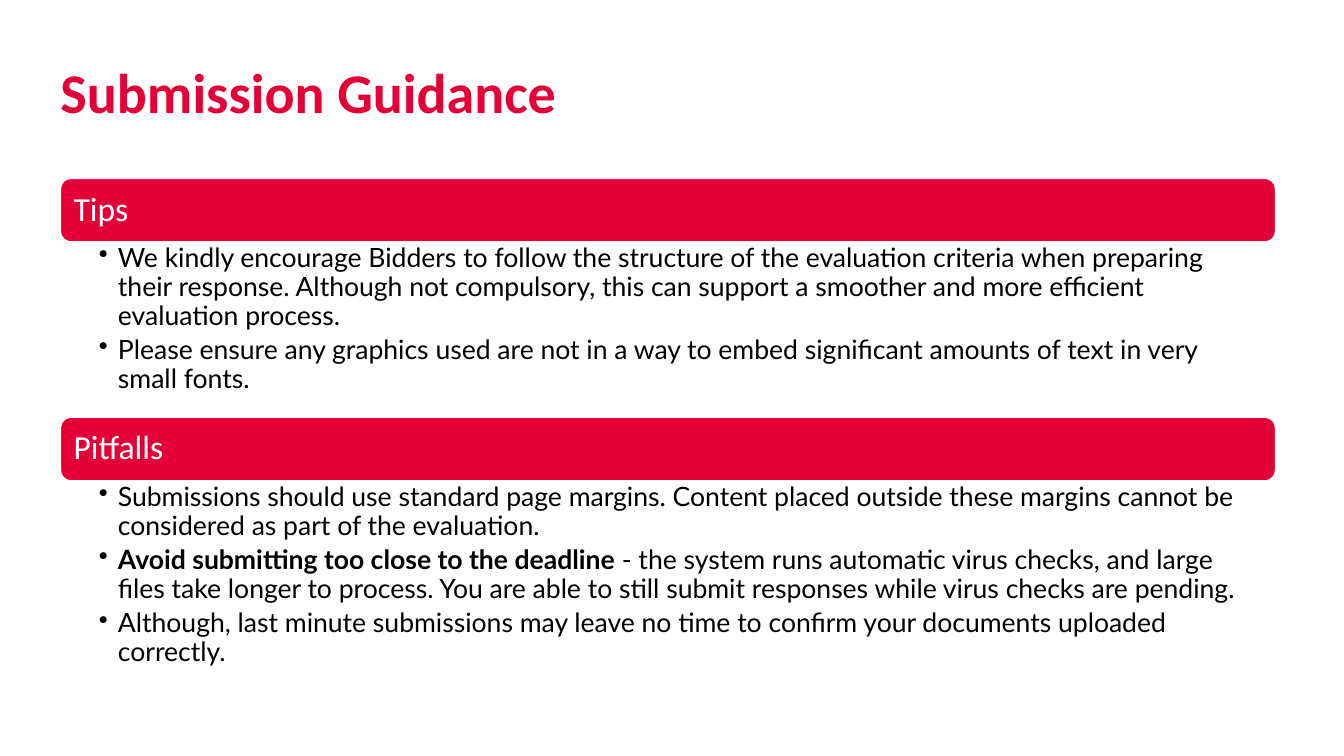
import pptx
import pptx.util
import pptx.dml.color
import pptx.enum.shapes
import pptx.enum.text
import pptx.oxml.ns
import lxml.etree

In, Pt = pptx.util.Inches, pptx.util.Pt
ANCHOR = pptx.enum.text.MSO_ANCHOR
ALIGN = pptx.enum.text.PP_ALIGN
COLORS = {"red": "E40037", "white": "FFFFFF", "black": "000000"}
FORMATS = {
    "title": ({"name": "Calibri", "size": Pt(40), "bold": True}, "red"),
    "heading": ({"name": "Calibri", "size": Pt(24), "bold": False}, "white"),
    "bullet": ({"name": "Lato", "size": Pt(19), "bold": False}, "black"),
}
LEFT, WIDTH, TOP, BAR_H = 0.6, 12.05, 1.77, 0.63
SECTIONS = [
    ("Tips", 1.74, [
        [("We kindly encourage Bidders to follow the structure of the evaluation criteria when "
          "preparing their response. Although not compulsory, this can support a smoother and "
          "more efficient evaluation process.", False)],
        [("Please ensure any graphics used are not in a way to embed significant amounts of "
          "text in very small fonts.", False)],
    ]),
    ("Pitfalls", 2.12, [
        [("Submissions should use standard page margins. Content placed outside these margins "
          "cannot be considered as part of the evaluation.", False)],
        [("Avoid submitting too close to the deadline", True),
         (" - the system runs automatic virus checks, and large files take longer to process. "
          "You are able to still submit responses while virus checks are pending.", False)],
        [("Although, last minute submissions may leave no time to confirm your documents "
          "uploaded correctly.", False)],
    ]),
]


def rgb(name):
    """Return the named colour."""
    return pptx.dml.color.RGBColor.from_string(COLORS[name])


def add_run(p, text, style, **extra):
    """Add a run in one of the text formats."""
    values, color = FORMATS[style]
    r = p.add_run()
    r.text = text
    for key, value in {**values, **extra}.items():
        setattr(r.font, key, value)
    r.font.color.rgb = rgb(color)


def set_frame(tf, margins, anchor=ANCHOR.TOP):
    """Set wrapping, anchor and insets of a text frame."""
    tf.word_wrap = True
    tf.auto_size = pptx.enum.text.MSO_AUTO_SIZE.NONE
    tf.vertical_anchor = anchor
    for side, value in zip(("left", "top", "right", "bottom"), margins):
        setattr(tf, "margin_" + side, In(value))


def add_bullet(p):
    """Give a paragraph a hanging bullet."""
    pPr = p._p.get_or_add_pPr()
    pPr.set("marL", str(In(0.19)))
    pPr.set("indent", str(-In(0.19)))
    lxml.etree.SubElement(pPr, pptx.oxml.ns.qn("a:buChar")).set("char", "•")


def add_title(s, text, left, top, width, height):
    """Place and format the title placeholder."""
    sp = s.shapes.title
    sp.left, sp.top, sp.width, sp.height = map(In, (left, top, width, height))
    set_frame(sp.text_frame, (0, 0, 0, 0))
    p = sp.text_frame.paragraphs[0]
    p.alignment = ALIGN.LEFT
    add_run(p, text, "title")


def add_heading(s, text, left, top, width, height):
    """Draw a rounded heading bar."""
    sp = s.shapes.add_shape(pptx.enum.shapes.MSO_SHAPE.ROUNDED_RECTANGLE,
                            *map(In, (left, top, width, height)))
    sp.shadow.inherit = False
    sp.fill.solid()
    sp.fill.fore_color.rgb = rgb("red")
    sp.line.color.rgb = rgb("white")
    sp.line.width = Pt(1)
    set_frame(sp.text_frame, (0.1, 0.1, 0.1, 0.1), ANCHOR.MIDDLE)
    p = sp.text_frame.paragraphs[0]
    p.alignment, p.line_spacing = ALIGN.LEFT, 0.9
    add_run(p, text, "heading")


def add_bullets(s, items, left, top, width, height):
    """Write a bulleted list."""
    tf = s.shapes.add_textbox(*map(In, (left, top, width, height))).text_frame
    set_frame(tf, (0.38, 0.03, 0.19, 0.03))
    for i, runs in enumerate(items):
        p = tf.add_paragraph() if i else tf.paragraphs[0]
        add_bullet(p)
        p.line_spacing, p.space_after = 0.9, Pt(4)
        for text, bold in runs:
            add_run(p, text, "bullet", bold=bold)


def main():
    """Build and save the slide."""
    prs = pptx.Presentation()
    prs.slide_width, prs.slide_height = In(13.33), In(7.5)
    s = prs.slides.add_slide(prs.slide_layouts[5])
    add_title(s, "Submission Guidance", LEFT, 0.57, 9.75, 1.16)
    top = TOP
    for heading, height, items in SECTIONS:
        add_heading(s, heading, LEFT, top, WIDTH, BAR_H)
        add_bullets(s, items, LEFT, top + BAR_H, WIDTH, height)
        top += BAR_H + height
    prs.save("out.pptx")


if __name__ == "__main__":
    main()
